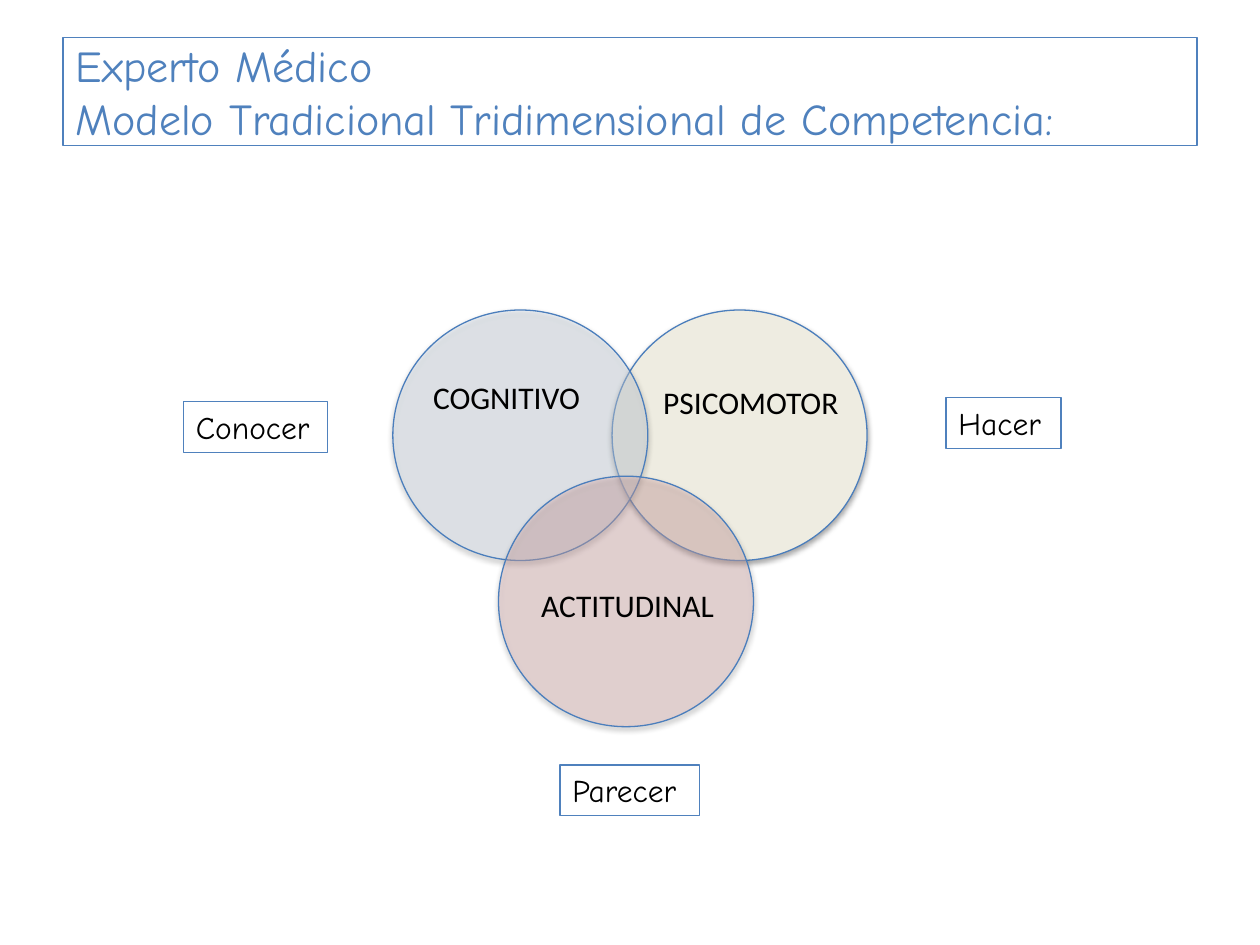
from lxml import etree
from pptx import Presentation
from pptx.dml.color import RGBColor
from pptx.enum.shapes import MSO_SHAPE
from pptx.enum.text import MSO_ANCHOR, MSO_AUTO_SIZE, PP_ALIGN
from pptx.oxml.ns import qn
from pptx.util import Cm, Pt

OVAL = MSO_SHAPE.OVAL
MIDDLE = MSO_ANCHOR.MIDDLE
LEFT = PP_ALIGN.LEFT
FIXED = MSO_AUTO_SIZE.NONE
HAND, SANS = "Comic Neue", "Calibri"
BLUE, RIM, BLACK = "4F81BD", "4B7EBC", "000000"


def tint(hue):
    return RGBColor.from_string(hue)


def edge(shape, hue):
    shape.line.color.rgb = tint(hue)
    shape.line.width = Pt(0.75)


def style(frame, face, size, hue):
    frame.word_wrap = True
    frame.auto_size = FIXED
    for para in frame.paragraphs:
        para.alignment = LEFT
        for run in para.runs:
            run.font.name = face
            run.font.size = Pt(size)
            run.font.color.rgb = tint(hue)


def child(node, tag, **attrs):
    return etree.SubElement(node, qn(tag), attrs)


def shade(shape):
    """Give the shape a soft shadow straight below it."""
    shape.shadow.inherit = False
    effects = shape.element.spPr.find(qn("a:effectLst"))
    outer = child(effects, "a:outerShdw", blurRad="40000", dist="23000",
                  dir="5400000", rotWithShape="0")
    black = child(outer, "a:srgbClr", val=BLACK)
    child(black, "a:alpha", val="35000")


def add_title(slide, left, top, width, height):
    title = slide.shapes.title
    title.left, title.top = Cm(left), Cm(top)
    title.width, title.height = Cm(width), Cm(height)
    edge(title, BLUE)
    frame = title.text_frame
    frame.text = ("Experto Médico\v"
                  "Modelo Tradicional Tridimensional de Competencia:")
    frame.vertical_anchor = MIDDLE
    style(frame, HAND, 25.2, BLUE)


def add_label(slide, text, left, top, width, face):
    box = slide.shapes.add_textbox(Cm(left), Cm(top), Cm(width), Cm(1.02))
    box.text_frame.text = text
    style(box.text_frame, face, 18, BLACK)
    return box


def add_circle(slide, left, top, hue, alpha):
    disc = slide.shapes.add_shape(OVAL, Cm(left), Cm(top), Cm(5.14), Cm(5.05))
    disc.fill.solid()
    disc.fill.fore_color.rgb = tint(hue)
    if alpha < 100:
        color = disc.element.spPr.find(qn("a:solidFill"))[0]
        child(color, "a:alpha", val=str(alpha * 1000))
    edge(disc, RIM)
    shade(disc)


def add_venn(slide, left, top):
    # Circles, from back to front: offset, fill, opacity
    circles = [
        (4.42, 0, "EEECE1", 100),
        (0, 0, "DCE6F2", 39),
        (2.13, 3.35, "E6B9B8", 38),
    ]
    for x, y, hue, alpha in circles:
        add_circle(slide, left + x, top + y, hue, alpha)
    # Names inside the circles
    names = [
        ("COGNITIVO", 0.56, 1.24, 3.54),
        ("PSICOMOTOR", 5.2, 1.34, 4.15),
        ("ACTITUDINAL", 2.74, 5.44, 4.04),
    ]
    for text, x, y, width in names:
        add_label(slide, text, left + x, top + y, width, SANS)
    # Framed verbs around the circles
    verbs = [
        ("Conocer", -4.22, 1.85, 2.9),
        ("Hacer", 11.15, 1.77, 2.32),
        ("Parecer", 3.37, 9.17, 2.82),
    ]
    for text, x, y, width in verbs:
        edge(add_label(slide, text, left + x, top + y, width, HAND), BLUE)


def main():
    deck = Presentation()
    deck.slide_width, deck.slide_height = Cm(25.4), Cm(19.05)
    slide = deck.slides.add_slide(deck.slide_layouts[5])
    add_title(slide, 1.27, 0.76, 22.86, 2.18)
    add_venn(slide, 7.92, 6.25)
    deck.save("out.pptx")


if __name__ == "__main__":
    main()
